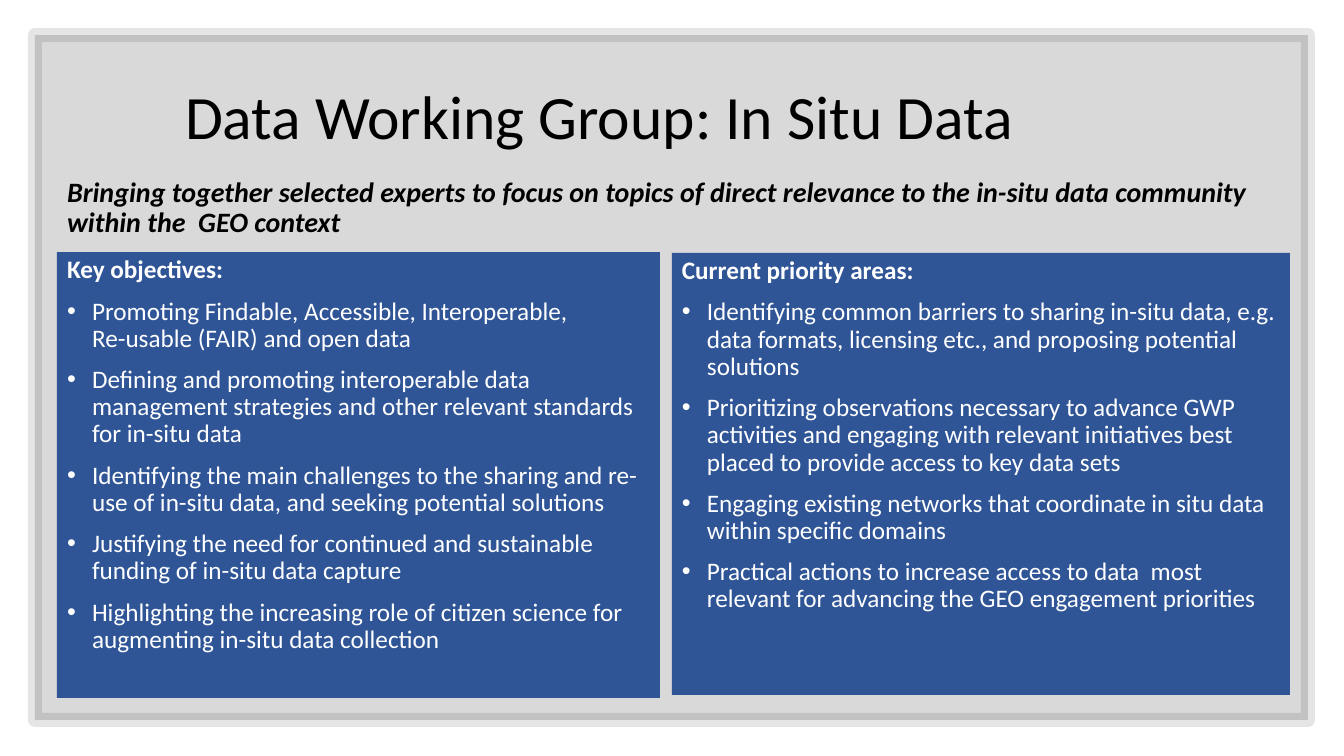
from lxml import etree
from pptx import Presentation
from pptx.dml.color import RGBColor
from pptx.enum.shapes import MSO_SHAPE
from pptx.enum.text import MSO_ANCHOR, MSO_AUTO_SIZE, PP_ALIGN
from pptx.oxml.ns import qn
from pptx.util import Emu, Pt

RECTANGLE = MSO_SHAPE.RECTANGLE
TOP, MIDDLE = MSO_ANCHOR.TOP, MSO_ANCHOR.MIDDLE
LEFT = PP_ALIGN.LEFT
NO_FIT = MSO_AUTO_SIZE.NONE
TWO_CONTENT_LAYOUT = 3

WIDTH, HEIGHT = 1344, 756
EMU_PER_PX = 12192000 / WIDTH
BULLET_INDENT = 25

TITLE = "Data Working Group: In Situ Data"
MISSION = (
    "Bringing together selected experts to focus on topics of direct relevance "
    "to the in-situ data community within the  GEO context"
)
OBJECTIVES = [
    "Promoting Findable, Accessible, Interoperable,\nRe-usable (FAIR) and open data",
    "Defining and promoting interoperable data management strategies and other "
    "relevant standards for in-situ data",
    "Identifying the main challenges to the sharing and re-use of in-situ data, "
    "and seeking potential solutions",
    "Justifying the need for continued and sustainable funding of in-situ data capture",
    "Highlighting the increasing role of citizen science for augmenting in-situ "
    "data collection",
]
PRIORITIES = [
    "Identifying common barriers to sharing in-situ data, e.g. data formats, "
    "licensing etc., and proposing potential solutions",
    "Prioritizing observations necessary to advance GWP activities and engaging "
    "with relevant initiatives best placed to provide access to key data sets",
    "Engaging existing networks that coordinate in situ data within specific domains",
    "Practical actions to increase access to data  most relevant for advancing "
    "the GEO engagement priorities",
]


def px(length):
    return Emu(round(length * EMU_PER_PX))


def rgb(color):
    return RGBColor.from_string(color)


def set_alpha(fill, percent):
    """Make a solid fill format partly transparent."""
    color = fill._xPr.find(qn("a:solidFill"))[0]
    etree.SubElement(color, qn("a:alpha"), val=str(percent * 1000))


class SlideBuilder:
    font = "Calibri"
    ink = "000000"
    panel_fill = "2F5597"
    panel_ink = "FFFFFF"

    def __init__(self, page):
        self.page = page

    def place(self, shape, area, anchor=TOP):
        shape.left, shape.top, shape.width, shape.height = map(px, area)
        frame = shape.text_frame
        frame.word_wrap = True
        frame.auto_size = NO_FIT
        frame.vertical_anchor = anchor
        return frame

    def fill_para(self, para, text, size, color, bold=False, italic=False,
                  bullet=False, before=10):
        para.alignment = LEFT
        para.line_spacing = 0.9
        para.space_before = Pt(before)
        para.space_after = Pt(0)
        properties = para._p.get_or_add_pPr()
        indent = px(BULLET_INDENT) if bullet else 0
        properties.set("marL", str(indent))
        properties.set("indent", str(-indent))
        if bullet:
            etree.SubElement(properties, qn("a:buFont"), typeface="Arial")
            etree.SubElement(properties, qn("a:buChar"), char="•")
        else:
            etree.SubElement(properties, qn("a:buNone"))
        for number, line in enumerate(text.split("\n")):
            if number:
                para.add_line_break()
            span = para.add_run()
            span.text = line
            span.font.name = self.font
            span.font.size = Pt(size)
            span.font.bold = bold
            span.font.italic = italic
            span.font.color.rgb = rgb(color)

    def border(self, area):
        """Draw the translucent grey backdrop behind everything else."""
        box = self.page.shapes.add_shape(RECTANGLE, *map(px, area))
        box.shadow.inherit = False
        box.fill.solid()
        box.fill.fore_color.rgb = rgb(self.ink)
        set_alpha(box.fill, 15)
        box.line.width = Pt(10)
        box.line.color.rgb = rgb(self.ink)
        set_alpha(box.line.fill, 10)
        self.page.shapes._spTree.insert(2, box._element)

    def title(self, text, area):
        frame = self.place(self.page.shapes.title, area, MIDDLE)
        self.fill_para(frame.paragraphs[0], text, 44, self.ink, before=0)

    def mission(self, text, area):
        frame = self.place(self.page.placeholders[1], area)
        self.fill_para(frame.paragraphs[0], text, 20, self.ink, bold=True, italic=True)

    def panel(self, shape, heading, items, area):
        shape.fill.solid()
        shape.fill.fore_color.rgb = rgb(self.panel_fill)
        frame = self.place(shape, area)
        self.fill_para(frame.paragraphs[0], heading, 18, self.panel_ink, bold=True)
        for item in items:
            self.fill_para(frame.add_paragraph(), item, 18, self.panel_ink, bullet=True)

    def rectangle(self):
        box = self.page.shapes.add_shape(RECTANGLE, 0, 0, 0, 0)
        box.shadow.inherit = False
        box.line.fill.background()
        return box


def main():
    deck = Presentation()
    deck.slide_width, deck.slide_height = px(WIDTH), px(HEIGHT)
    page = deck.slides.add_slide(deck.slide_layouts[TWO_CONTENT_LAYOUT])
    builder = SlideBuilder(page)
    builder.border((35, 35, 1273, 685))
    builder.title(TITLE, (175, 74, 1159, 91))
    builder.mission(MISSION, (57, 173, 1201, 87))
    builder.panel(page.placeholders[2], "Key objectives:", OBJECTIVES,
                  (57, 252, 603, 446))
    builder.panel(builder.rectangle(), "Current priority areas:", PRIORITIES,
                  (672, 253, 618, 442))
    deck.save("out.pptx")


if __name__ == "__main__":
    main()
